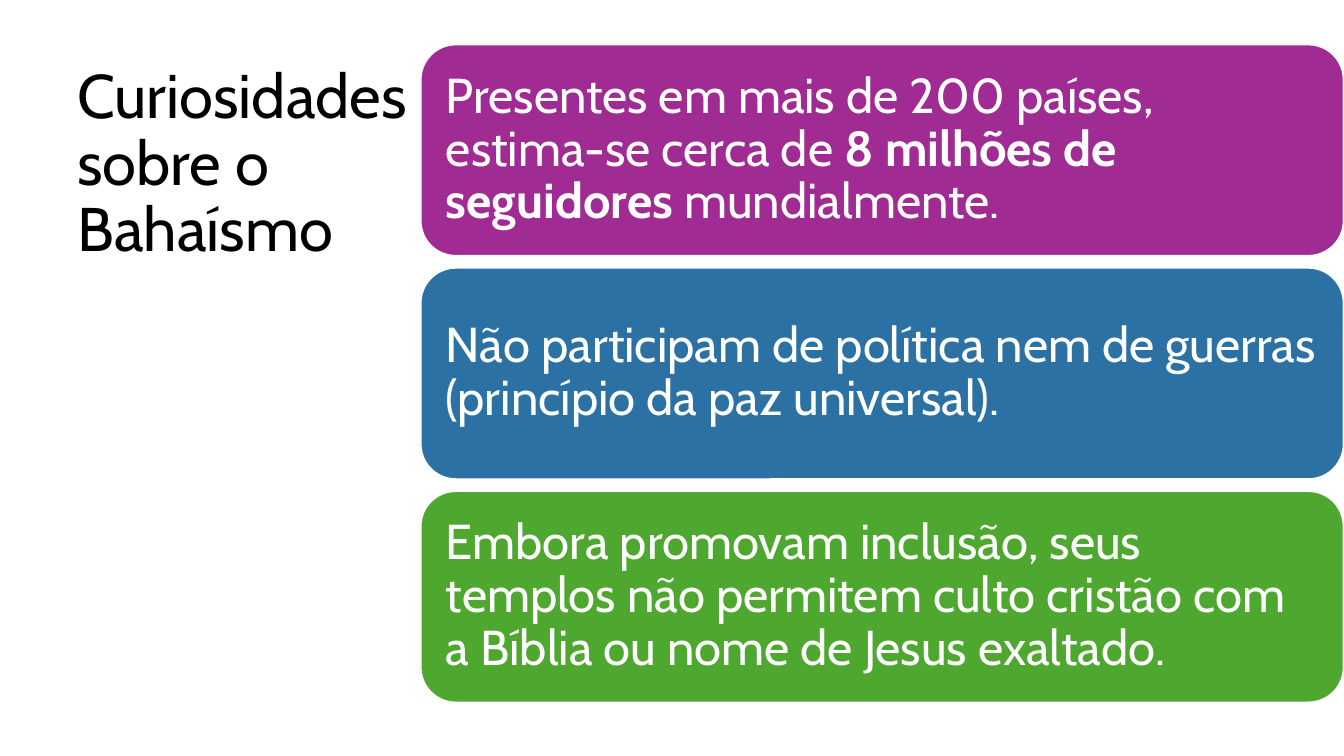
from pptx import Presentation
from pptx.dml.color import RGBColor
from pptx.enum import shapes, text
from pptx.util import Pt

FONT = "Cabin"
BLACK = RGBColor(0x00, 0x00, 0x00)
WHITE = RGBColor(0xFF, 0xFF, 0xFF)
PURPLE = RGBColor(0xA0, 0x2B, 0x93)
BLUE = RGBColor(0x2C, 0x71, 0xA4)
GREEN = RGBColor(0x4E, 0xA7, 0x2E)

# Card column
CARD_LEFT, CARD_TOP = 300.4, 31.7
CARD_WIDTH, CARD_HEIGHT = 659.5, 151.2
CARD_PITCH = 159.5
CARD_INSET = 10.8

# Each card: fill and its (text, bold) runs
CARDS = [
    (PURPLE, [("Presentes em mais de 200 países, estima-se cerca de ", False),
              ("8 milhões de seguidores", True),
              (" mundialmente.", False)]),
    (BLUE, [("Não participam de política nem de guerras "
             "(princípio da paz universal).", False)]),
    (GREEN, [("Embora promovam inclusão, seus templos não permitem culto "
              "cristão com a Bíblia ou nome de Jesus exaltado.", False)]),
]


def write(tf, runs, size, color, anchor):
    tf.word_wrap = True
    tf.vertical_anchor = anchor
    p = tf.paragraphs[0]
    p.alignment = text.PP_ALIGN.LEFT
    p.line_spacing = 0.9
    p.font.name, p.font.size = FONT, Pt(size)
    p.font.color.rgb = color
    for words, bold in runs:
        r = p.add_run()
        r.text = words
        if bold:
            r.font.bold = True


def add_title(s, words):
    sp = s.shapes.add_textbox(Pt(48.2), Pt(43.2), Pt(275), Pt(455.8))
    write(sp.text_frame, [(words, False)], 44, BLACK, text.MSO_ANCHOR.TOP)


def add_card(s, top, fill, runs):
    sp = s.shapes.add_shape(shapes.MSO_SHAPE.ROUNDED_RECTANGLE, Pt(CARD_LEFT),
                            Pt(top), Pt(CARD_WIDTH), Pt(CARD_HEIGHT))
    sp.shadow.inherit = False
    sp.fill.solid()
    sp.fill.fore_color.rgb = fill
    sp.line.color.rgb = WHITE
    sp.line.width = Pt(1.5)
    tf = sp.text_frame
    tf.margin_left = tf.margin_right = Pt(CARD_INSET)
    tf.margin_top = tf.margin_bottom = Pt(CARD_INSET)
    write(tf, runs, 35, WHITE, text.MSO_ANCHOR.MIDDLE)


def main():
    prs = Presentation()
    prs.slide_width, prs.slide_height = Pt(960), Pt(540)
    s = prs.slides.add_slide(prs.slide_layouts[6])

    # Title on the left
    add_title(s, "Curiosidades sobre o Bahaísmo")

    # Stacked fact cards
    for i, (fill, runs) in enumerate(CARDS):
        add_card(s, CARD_TOP + i * CARD_PITCH, fill, runs)

    prs.save("out.pptx")


if __name__ == "__main__":
    main()
